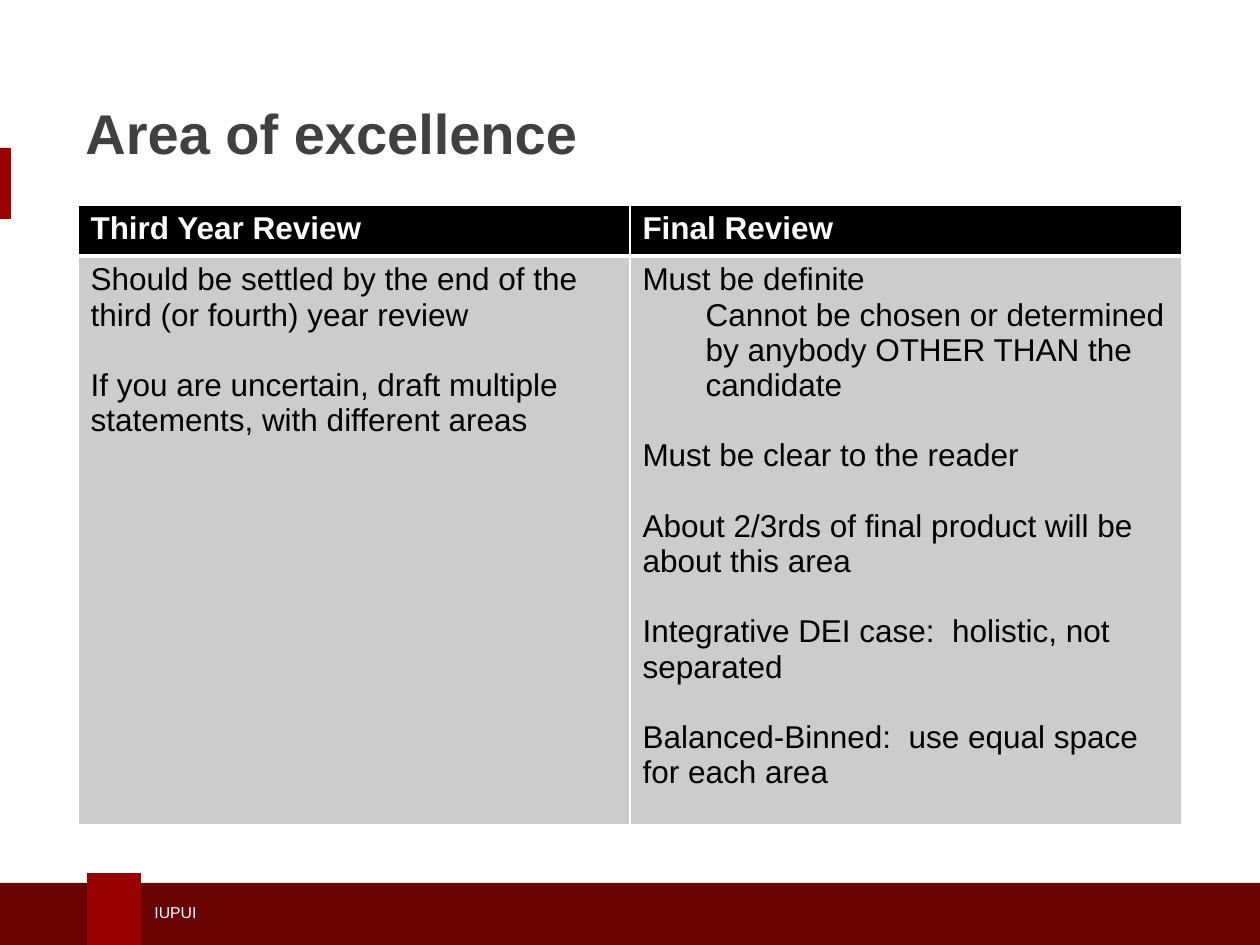
from lxml import etree
from pptx import Presentation
from pptx.dml.color import RGBColor
from pptx.enum.shapes import MSO_SHAPE
from pptx.enum.text import MSO_ANCHOR
from pptx.oxml.ns import qn
from pptx.util import Emu, Pt

PX_PER_INCH = 126
WIDTH, HEIGHT = 1260, 945
RED, DARK_RED = "990000", "690304"
WHITE, BLACK, GREY, TITLE_GREY = "FFFFFF", "000000", "CCCCCC", "404041"
BLANK_LINE = 20  # points between separate statements
INDENT = 63

HEADERS = ["Third Year Review", "Final Review"]
# Each statement: text, space before in points, left indent in px
STATEMENTS = [
    [
        ("Should be settled by the end of the third (or fourth) year review", 0, 0),
        ("If you are uncertain, draft multiple statements, with different areas", BLANK_LINE, 0),
    ],
    [
        ("Must be definite", 0, 0),
        ("Cannot be chosen or determined by anybody OTHER THAN the candidate", 0, INDENT),
        ("Must be clear to the reader", BLANK_LINE, 0),
        ("About 2/3rds of final product will be about this area", BLANK_LINE, 0),
        ("Integrative DEI case:  holistic, not separated", BLANK_LINE, 0),
        ("Balanced-Binned:  use equal space for each area", BLANK_LINE, 0),
    ],
]


def px(length):
    return Emu(round(length * 914400 / PX_PER_INCH))


def rgb(value):
    return RGBColor.from_string(value)


def set_font(font, size, color, bold=False):
    for attribute, value in {"name": "Arial", "size": Pt(size), "bold": bold}.items():
        setattr(font, attribute, value)
    font.color.rgb = rgb(color)


def add_block(slide, box, color):
    block = slide.shapes.add_shape(MSO_SHAPE.RECTANGLE, *map(px, box))
    block.shadow.inherit = False
    block.fill.solid()
    block.fill.fore_color.rgb = rgb(color)
    block.line.fill.background()


def add_label(slide, box, text, size, color, bold=False):
    frame = slide.shapes.add_textbox(*map(px, box)).text_frame
    frame.word_wrap = True
    frame.vertical_anchor = MSO_ANCHOR.MIDDLE
    run = frame.paragraphs[0].add_run()
    run.text = text
    set_font(run.font, size, color, bold)


def set_borders(cell, widths):
    """Draw white cell borders; widths maps the side letters L, R, T, B to points."""
    properties = cell._tc.get_or_add_tcPr()
    for position, (side, width) in enumerate(widths.items()):
        border = etree.Element(qn(f"a:ln{side}"), w=str(Pt(width)))
        fill = etree.SubElement(border, qn("a:solidFill"))
        etree.SubElement(fill, qn("a:srgbClr"), val=WHITE)
        properties.insert(position, border)


def fill_cell(cell, statements, fill, color, bold, borders):
    cell.fill.solid()
    cell.fill.fore_color.rgb = rgb(fill)
    set_borders(cell, borders)
    frame = cell.text_frame
    for index, (text, space, indent) in enumerate(statements):
        paragraph = frame.add_paragraph() if index else frame.paragraphs[0]
        if space:
            paragraph.space_before = Pt(space)
        if indent:
            paragraph.level = 1
            paragraph._p.get_or_add_pPr().set("marL", str(px(indent)))
            paragraph._p.get_or_add_pPr().set("indent", "0")
        run = paragraph.add_run()
        run.text = text
        set_font(run.font, 18, color, bold)


def add_review_table(slide, left, top, column_width, row_heights):
    box = (left, top, column_width * len(HEADERS), sum(row_heights))
    table = slide.shapes.add_table(len(row_heights), len(HEADERS), *map(px, box)).table
    for row, height in zip(table.rows, row_heights):
        row.height = px(height)
    for column, (header, statements) in enumerate(zip(HEADERS, STATEMENTS)):
        table.columns[column].width = px(column_width)
        fill_cell(table.cell(0, column), [(header, 0, 0)], BLACK, WHITE, True,
                  {"L": 1, "R": 1, "T": 1, "B": 3})
        fill_cell(table.cell(1, column), statements, GREY, BLACK, False,
                  {"L": 1, "R": 1, "T": 3, "B": 1})


def main():
    presentation = Presentation()
    presentation.slide_width, presentation.slide_height = px(WIDTH), px(HEIGHT)
    slide = presentation.slides.add_slide(presentation.slide_layouts[6])

    add_block(slide, (0, 148, 11, 71), RED)
    add_block(slide, (0, 883, WIDTH, HEIGHT - 883), DARK_RED)
    add_block(slide, (87, 873, 54, HEIGHT - 873), RED)
    add_label(slide, (142, 896, 498, 32), "IUPUI", 9, WHITE)
    add_label(slide, (73, 88, 1102, 88), "Area of excellence", 32, TITLE_GREY, True)
    add_review_table(slide, 78, 205, 552, (51, 541))

    presentation.save("out.pptx")


if __name__ == "__main__":
    main()
